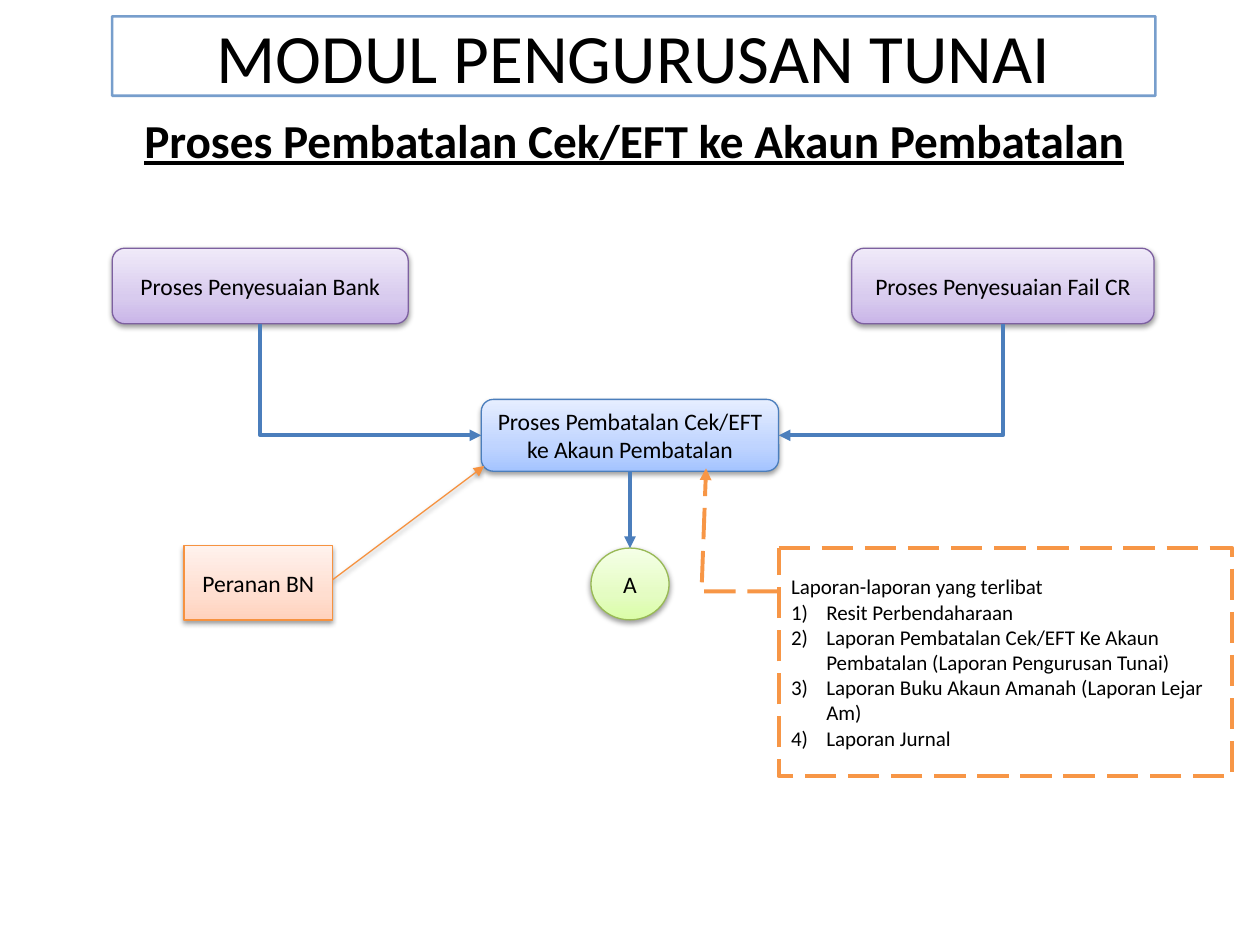
from dataclasses import dataclass
from copy import deepcopy

from lxml.etree import SubElement
from pptx import Presentation
from pptx.dml.color import RGBColor
from pptx.enum.dml import MSO_LINE
from pptx.enum.shapes import MSO_CONNECTOR, MSO_SHAPE
from pptx.enum.text import MSO_ANCHOR, MSO_AUTO_SIZE, PP_ALIGN
from pptx.oxml.ns import qn
from pptx.util import Inches, Pt


@dataclass(frozen=True)
class Tint:
    gradient: tuple[str, str, str]
    line: str


@dataclass(frozen=True)
class Theme:
    font: str = "Calibri"
    text: str = "000000"
    paper: str = "FFFFFF"
    flow: str = "4B7EBC"
    title_frame: str = "4F81BD"
    report: str = "F79646"
    purple: Tint = Tint(("C9B5E8", "D8CBEE", "F0EAF9"), "7D60A0")
    blue: Tint = Tint(("A4C4FF", "BFD4FF", "E6EEFF"), "4B7EBC")
    green: Tint = Tint(("DAFDA7", "E4FCC2", "F5FFE7"), "98B955")
    orange: Tint = Tint(("FFD2BD", "FFDED0", "FFF2ED"), "F69240")
    title_size: float = 39.6
    heading_size: float = 27
    step_size: float = 13.5
    report_size: float = 12


THEME = Theme()
STOP_POSITIONS = (0, 35, 100)


@dataclass(frozen=True)
class Step:
    text: str
    box: tuple[float, float, float, float]
    tint: Tint
    kind: MSO_SHAPE = MSO_SHAPE.ROUNDED_RECTANGLE
    pointer: tuple[float, ...] = ()


BANK = Step("Proses Penyesuaian Bank", (0.89, 1.97, 2.35, 0.6), THEME.purple)
FILE_CR = Step("Proses Penyesuaian Fail CR", (6.76, 1.97, 2.4, 0.6), THEME.purple)
CANCELLATION = Step("Proses Pembatalan Cek/EFT ke Akaun Pembatalan",
                    (3.82, 3.17, 2.36, 0.57), THEME.blue)
NEXT_PAGE = Step("A", (4.69, 4.35, 0.62, 0.57), THEME.green, MSO_SHAPE.OVAL)
ROLE = Step("Peranan BN", (1.46, 4.33, 1.18, 0.59), THEME.orange,
            MSO_SHAPE.LINE_CALLOUT_1, (0.46, 1.0, -1.07, 2.02))

REPORT_HEADING = "Laporan-laporan yang terlibat"
REPORTS = (
    "Resit Perbendaharaan",
    "Laporan Pembatalan Cek/EFT Ke Akaun Pembatalan (Laporan Pengurusan Tunai)",
    "Laporan Buku Akaun Amanah (Laporan Lejar Am)",
    "Laporan Jurnal",
)
REPORT_POINTER = (0.19, 0, 0.19, -0.17, -0.35, -0.16)


def rgb(colour: str) -> RGBColor:
    return RGBColor.from_string(colour)


def write(paragraph, text: str, size: float, align=PP_ALIGN.CENTER):
    paragraph.alignment = align
    run = paragraph.add_run()
    run.text = text
    run.font.name = THEME.font
    run.font.size = Pt(size)
    run.font.color.rgb = rgb(THEME.text)
    return run


def set_line(shape, colour: str, width: float) -> None:
    shape.line.color.rgb = rgb(colour)
    shape.line.width = Pt(width)


def add_arrowhead(shape) -> None:
    SubElement(shape.line._get_or_add_ln(), qn("a:tailEnd"), type="triangle")


def fill_gradient(shape, colours: tuple[str, ...]) -> None:
    """Fill from the first colour at the bottom to the last at the top."""
    shape.fill.gradient()
    shape.fill.gradient_angle = 90
    last = shape._element.xpath(".//a:gs")[-1]
    last.addprevious(deepcopy(last))
    for stop, colour in zip(shape.fill.gradient_stops, colours):
        stop.color.rgb = rgb(colour)
    for node, position in zip(shape._element.xpath(".//a:gs"), STOP_POSITIONS):
        node.set("pos", str(position * 1000))


def add_soft_shadow(shape) -> None:
    shape.shadow.inherit = False
    effects = shape._element.spPr.find(qn("a:effectLst"))
    shadow = SubElement(effects, qn("a:outerShdw"), blurRad=str(Pt(3.1)),
                        dist=str(Pt(1.6)), dir="5400000", rotWithShape="0")
    black = SubElement(shadow, qn("a:srgbClr"), val="000000")
    SubElement(black, qn("a:alpha"), val="38000")


def add_step(slide, step: Step):
    shape = slide.shapes.add_shape(step.kind, *map(Inches, step.box))
    for index, value in enumerate(step.pointer):
        shape.adjustments[index] = value
    fill_gradient(shape, step.tint.gradient)
    set_line(shape, step.tint.line, 0.75)
    if step.pointer:
        add_arrowhead(shape)
    add_soft_shadow(shape)
    frame = shape.text_frame
    frame.word_wrap = True
    frame.vertical_anchor = MSO_ANCHOR.MIDDLE
    write(frame.paragraphs[0], step.text, THEME.step_size)
    return shape


def add_flow(slide, kind, source, target, target_side: int):
    """Lead an arrow from the bottom of source to a side of target."""
    flow = slide.shapes.add_connector(kind, 0, 0, 0, 0)
    flow.begin_connect(source, 2)
    flow.end_connect(target, target_side)
    set_line(flow, THEME.flow, 2.25)
    add_arrowhead(flow)
    SubElement(flow._element.spPr, qn("a:effectLst"))
    return flow


def add_corner_flow(slide, source, target, target_side: int) -> None:
    """Draw a flow that goes down, then sideways, with a single bend."""
    flow = add_flow(slide, MSO_CONNECTOR.ELBOW, source, target, target_side)
    goes_right = flow.end_x > flow.begin_x
    left, top, width, height = flow.left, flow.top, flow.width, flow.height
    flow.left = left + (width - height) // 2
    flow.top = top + (height - width) // 2
    flow.width, flow.height = height, width
    properties = flow._element.spPr
    properties.find(qn("a:prstGeom")).set("prst", "bentConnector2")
    frame = properties.find(qn("a:xfrm"))
    frame.set("rot", str((270 if goes_right else 90) * 60000))
    frame.set("flipH", "1" if goes_right else "0")


def add_reports(slide) -> None:
    shape = slide.shapes.add_shape(MSO_SHAPE.LINE_CALLOUT_2, Inches(6.18), Inches(4.35),
                                   Inches(3.6), Inches(1.81))
    for index, value in enumerate(REPORT_POINTER):
        shape.adjustments[index] = value
    shape.fill.solid()
    shape.fill.fore_color.rgb = rgb(THEME.paper)
    set_line(shape, THEME.report, 2.25)
    shape.line.dash_style = MSO_LINE.LONG_DASH
    add_arrowhead(shape)
    shape.shadow.inherit = False
    frame = shape.text_frame
    frame.word_wrap = True
    frame.vertical_anchor = MSO_ANCHOR.MIDDLE
    write(frame.paragraphs[0], REPORT_HEADING, THEME.report_size, PP_ALIGN.LEFT)
    for report in REPORTS:
        paragraph = frame.add_paragraph()
        write(paragraph, report, THEME.report_size, PP_ALIGN.LEFT)
        properties = paragraph._p.get_or_add_pPr()
        properties.set("marL", str(Inches(0.28)))
        properties.set("indent", str(Inches(-0.28)))
        SubElement(properties, qn("a:buAutoNum"), type="arabicParenR")


def add_headings(slide) -> None:
    title = slide.shapes.title
    title.left, title.top = Inches(0.89), Inches(0.13)
    title.width, title.height = Inches(8.28), Inches(0.63)
    set_line(title, THEME.title_frame, 1.5)
    SubElement(title._element.xpath(".//a:ln//a:srgbClr")[0], qn("a:alpha"), val="76000")
    title.text_frame.auto_size = MSO_AUTO_SIZE.NONE
    title.text_frame.vertical_anchor = MSO_ANCHOR.MIDDLE
    write(title.text_frame.paragraphs[0], "MODUL PENGURUSAN TUNAI", THEME.title_size)

    heading = slide.shapes.add_textbox(Inches(0.9), Inches(0.84), Inches(8.27), Inches(0.53))
    frame = heading.text_frame
    frame.word_wrap = True
    frame.auto_size = MSO_AUTO_SIZE.SHAPE_TO_FIT_TEXT
    frame.margin_left = frame.margin_right = Inches(0.07)
    frame.margin_top = frame.margin_bottom = Inches(0.04)
    run = write(frame.paragraphs[0], CANCELLATION.text, THEME.heading_size)
    run.font.bold = run.font.underline = True


def main() -> None:
    deck = Presentation()
    deck.slide_width, deck.slide_height = Inches(10), Inches(7.5)
    slide = deck.slides.add_slide(deck.slide_layouts[5])
    add_headings(slide)
    bank, file_cr, cancellation, next_page, _ = (
        add_step(slide, step) for step in (BANK, FILE_CR, CANCELLATION, NEXT_PAGE, ROLE))
    add_corner_flow(slide, bank, cancellation, 1)
    add_corner_flow(slide, file_cr, cancellation, 3)
    add_flow(slide, MSO_CONNECTOR.STRAIGHT, cancellation, next_page, 0)
    add_reports(slide)
    deck.save("out.pptx")


if __name__ == "__main__":
    main()
